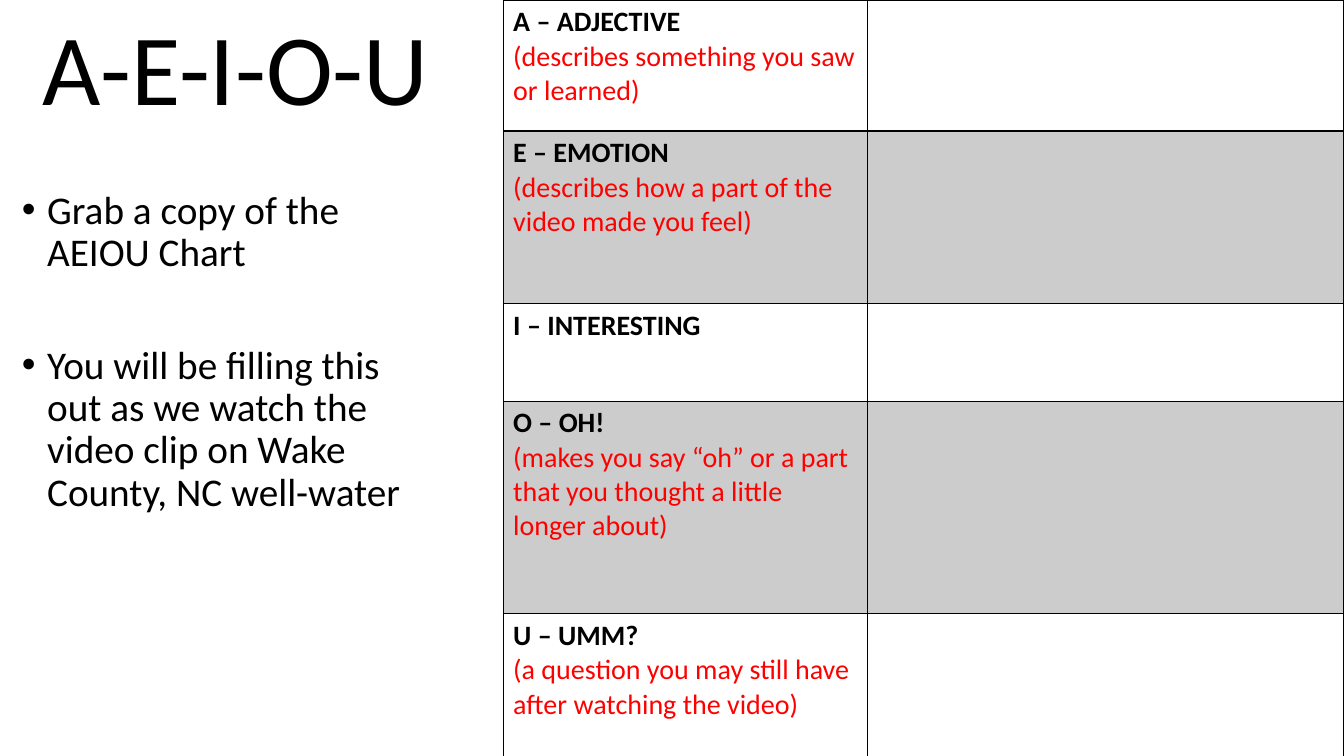
"""Build the A-E-I-O-U video chart slide."""
import pptx
import pptx.dml.color
import pptx.enum.text
import pptx.oxml
import pptx.oxml.ns
import pptx.util

Inches = pptx.util.Inches
Pt = pptx.util.Pt

TITLE = "A-E-I-O-U "
STEPS = [
    "Grab a copy of the AEIOU Chart",
    "You will be filling this out as we watch the video clip on Wake County, NC well-water",
]
ROWS = [
    ("A – ADJECTIVE", "(describes something you saw or learned)", 1.3),
    ("E – EMOTION", "(describes how a part of the video made you feel)", 1.71),
    ("I – INTERESTING", "", 0.97),
    ("O – OH!", "(makes you say “oh” or a part that you thought a little longer about)", 2.11),
    ("U – UMM?", "(a question you may still have after watching the video)", 1.71),
]
WIDTHS = [3.61, 4.73]
COLORS = {"text": "000000", "hint": "FF0000", "band": "CCCCCC"}
FONT = "Calibri"


def color(name):
    return pptx.dml.color.RGBColor.from_string(COLORS[name])


def add_run(para, text, size, name="text", bold=False):
    run = para.add_run()
    run.text = text
    run.font.name = FONT
    run.font.size = Pt(size)
    run.font.bold = bold
    run.font.color.rgb = color(name)


def add_xml(parent, xml, index=None):
    item = pptx.oxml.parse_xml(xml.replace(">", " " + pptx.oxml.ns.nsdecls("a") + ">", 1))
    parent.insert(len(parent) if index is None else index, item)


def set_edges(cell, widths):
    props = cell._tc.get_or_add_tcPr()
    for index, (side, width) in enumerate(widths.items()):
        add_xml(props, f'<a:ln{side} w="{Pt(width)}"><a:solidFill>'
                f'<a:srgbClr val="{COLORS["text"]}"/></a:solidFill></a:ln{side}>', index)


def add_title(slide):
    title = slide.shapes.title
    title.left, title.top = Inches(0.12), Inches(0)
    title.width, title.height = Inches(4.66), Inches(1.45)
    frame = title.text_frame
    frame.word_wrap = True
    frame.vertical_anchor = pptx.enum.text.MSO_ANCHOR.MIDDLE
    para = frame.paragraphs[0]
    para.alignment = pptx.enum.text.PP_ALIGN.CENTER
    para.line_spacing = 0.9
    add_run(para, TITLE, 72)


def add_steps(slide):
    box = slide.shapes.add_textbox(Inches(0.12), Inches(1.84), Inches(4.17), Inches(5.28))
    frame = box.text_frame
    frame.word_wrap = True
    for index, step in enumerate(STEPS):
        para = frame.add_paragraph() if index else frame.paragraphs[0]
        para.line_spacing = 0.9
        para.space_before = Pt(50 if index else 10)
        props = para._p.get_or_add_pPr()
        props.set("marL", str(Inches(0.25)))
        props.set("indent", str(-Inches(0.25)))
        add_xml(props, '<a:buFont typeface="Arial"></a:buFont>')
        add_xml(props, '<a:buChar char="•"></a:buChar>')
        add_run(para, step, 28)


def add_chart_table(slide):
    heights = [row[2] for row in ROWS]
    frame = slide.shapes.add_table(len(ROWS), len(WIDTHS), Inches(4.99), Inches(0),
                                   Inches(sum(WIDTHS)), Inches(sum(heights)))
    table = frame.table
    table.first_row = table.horz_banding = False
    for column, width in zip(table.columns, WIDTHS):
        column.width = Inches(width)
    for index, (head, hint, height) in enumerate(ROWS):
        row = table.rows[index]
        row.height = Inches(height)
        for cell in row.cells:
            if index % 2:
                cell.fill.solid()
                cell.fill.fore_color.rgb = color("band")
            else:
                cell.fill.background()
            set_edges(cell, {"L": 1, "R": 1, "T": 2 if index == 1 else 1,
                             "B": 2 if index == 0 else 1})
        text = row.cells[0].text_frame
        add_run(text.paragraphs[0], head, 20, bold=True)
        if hint:
            add_run(text.add_paragraph(), hint, 20, "hint")


def main():
    deck = pptx.Presentation()
    deck.slide_width, deck.slide_height = Inches(13.33), Inches(7.5)
    slide = deck.slides.add_slide(deck.slide_layouts[5])
    add_title(slide)
    add_steps(slide)
    add_chart_table(slide)
    deck.save("out.pptx")


if __name__ == "__main__":
    main()
